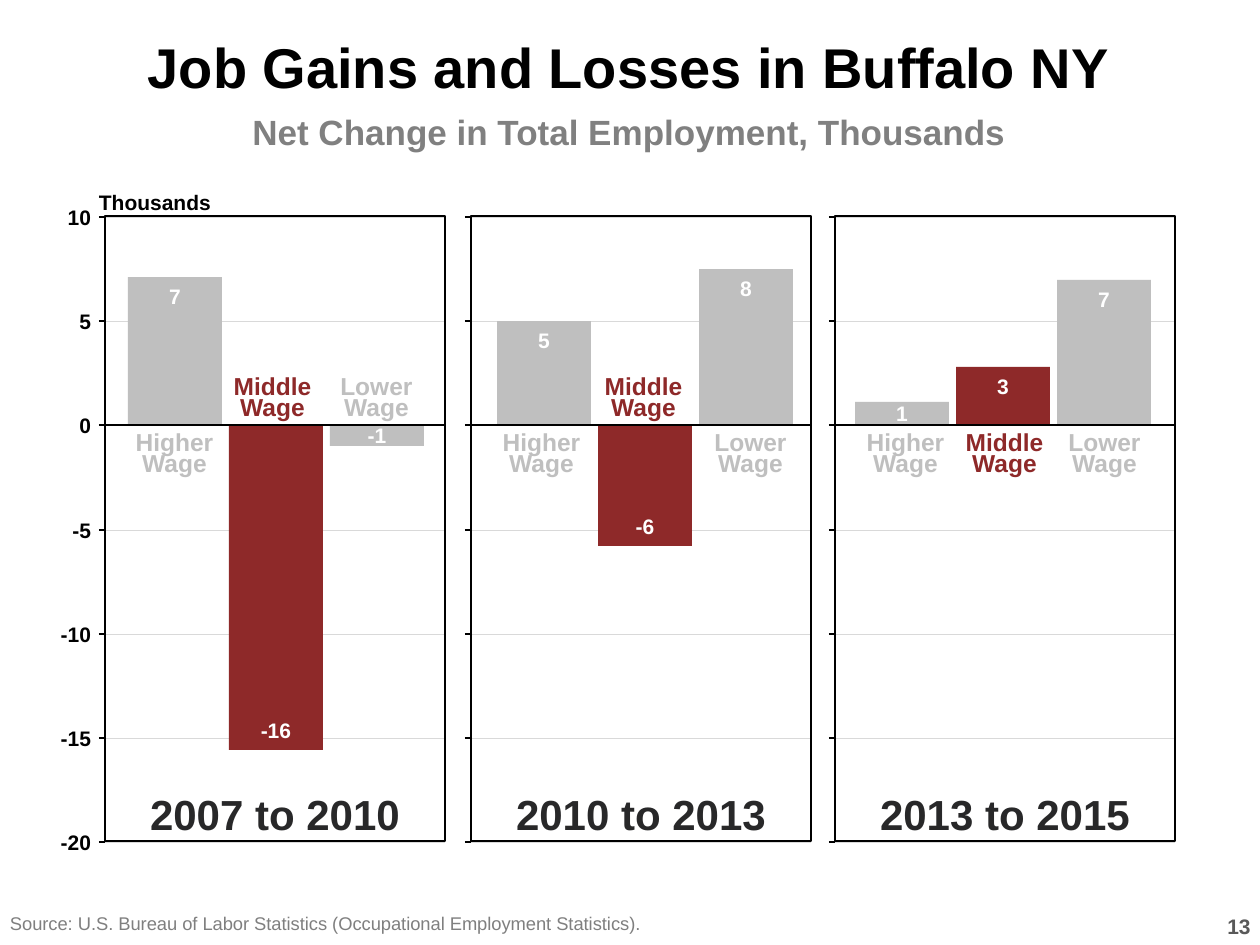
from lxml.etree import SubElement
from pptx import Presentation
from pptx.dml.color import RGBColor
from pptx.enum.shapes import MSO_CONNECTOR, MSO_SHAPE
from pptx.enum.text import PP_ALIGN
from pptx.oxml.ns import qn
from pptx.util import Emu, Pt

COLORS = {
    "black": "000000", "white": "FFFFFF", "grid": "D9D9D9", "bar": "BFBFBF",
    "focus": "8E2929", "period": "282829", "sub": "808080",
    "source": "7F7F7F", "page": "595959",
}
TOP, HIGH, WIDE = 217, 625, 340
TICKS = range(10, -21, -5)
BAR, STEP, INSET, LINE = 94, 101, 7, 25
NAME = 107
NAMES = ["Higher\vWage", "Middle\vWage", "Lower\vWage"]
FILLS = ["bar", "focus", "bar"]

# period, panel left, first bar left, wage label lefts, (height, label) of bars
PANELS = [
    ("2007 to 2010", 105, 128, (121, 219, 323),
     ((7.1, "7"), (-15.6, "-16"), (-1, "-1"))),
    ("2010 to 2013", 471, 497, (488, 590, 697),
     ((5, "5"), (-5.8, "-6"), (7.5, "8"))),
    ("2013 to 2015", 835, 855, (852, 951, 1051),
     ((1.1, "1"), (2.8, "3"), (7, "7"))),
]


def px(n):
    return Emu(round(n * 914400 / 126))


def level(value):
    """Height on the slide of a value on the axis."""
    return round(TOP + (TICKS[0] - value) * HIGH / (TICKS[0] - TICKS[-1]))


class Pen:
    font = "Arial"

    def __init__(self, slide):
        self.shapes = slide.shapes

    def color(self, name):
        return RGBColor.from_string(COLORS[name])

    def text(self, box, *lines, bold=True, align=PP_ALIGN.CENTER,
             pitch=None, gap=0):
        """Each line is (words, size, color); gap parts the lines."""
        frame = self.shapes.add_textbox(*map(px, box)).text_frame
        frame.word_wrap = True
        frame.margin_left = frame.margin_right = 0
        frame.margin_top = frame.margin_bottom = 0
        for i, (words, size, color) in enumerate(lines):
            para = frame.add_paragraph() if i else frame.paragraphs[0]
            para.text = words
            para.alignment = align
            if i:
                para.space_before = Pt(gap)
            if pitch:
                para.line_spacing = Pt(pitch)
            for run in para.runs:
                run.font.name = self.font
                run.font.size = Pt(size)
                run.font.bold = bold
                run.font.color.rgb = self.color(color)

    def rect(self, box, fill=None, line=None):
        shape = self.shapes.add_shape(MSO_SHAPE.RECTANGLE, *map(px, box))
        shape.shadow.inherit = False
        if fill:
            shape.fill.solid()
            shape.fill.fore_color.rgb = self.color(fill)
        else:
            shape.fill.background()
        if line:
            shape.line.color.rgb = self.color(line)
            shape.line.width = Pt(0.75)
        else:
            shape.line.fill.background()

    def line(self, x1, y1, x2, y2, color="black", width=0.75):
        link = self.shapes.add_connector(
            MSO_CONNECTOR.STRAIGHT, px(x1), px(y1), px(x2), px(y2))
        link.line.color.rgb = self.color(color)
        link.line.width = Pt(width)
        SubElement(link._element.spPr, qn("a:effectLst"))

    def bar(self, left, value, label, fill):
        top, base = sorted((level(value), level(0)))
        self.rect((left, top, BAR, base - top), fill)
        inset = min(INSET, (base - top - LINE) // 2)
        y = top + inset if value > 0 else base - LINE - inset
        wide = 12 * len(label)
        x = left + (BAR - wide) // 2
        self.text((x, y, wide, LINE), (label, 12, "white"))

    def panel(self, period, left, start, spots, bars):
        right = left + WIDE
        for tick in TICKS:
            y = level(tick)
            if tick:
                self.line(left, y, right, y, "grid", 0.5)
            self.line(left - 6, y, left, y)
        self.rect((left, TOP - 1, WIDE, HIGH), line="black")
        for i, (value, label) in enumerate(bars):
            self.bar(start + i * STEP, value, label, FILLS[i])
            y = 435 if value > 0 else 379
            self.text((spots[i], y, NAME, 43),
                      (NAMES[i], 14, FILLS[i]), pitch=12)
        self.line(left, level(0), right, level(0), width=1.25)
        self.text((left, 789, WIDE, 48), (period, 24, "period"))


def main():
    deck = Presentation()
    deck.slide_width, deck.slide_height = px(1260), px(945)
    pen = Pen(deck.slides.add_slide(deck.slide_layouts[6]))

    pen.text((10, 33, 1238, 116),
             ("Job Gains and Losses in Buffalo NY", 32, "black"),
             ("Net Change in Total Employment, Thousands", 20, "sub"), gap=6)

    for panel in PANELS:
        pen.panel(*panel)

    axis = PANELS[0][1]
    pen.line(axis, TOP, axis, TOP + HIGH, width=1.25)
    pen.text((99, 190, 113, LINE), ("Thousands", 12, "black"),
             align=PP_ALIGN.LEFT)
    for tick in TICKS:
        pen.text((55, level(tick) - 12, 36, LINE),
                 (str(tick), 12, "black"), align=PP_ALIGN.RIGHT)

    pen.text((10, 912, 968, 22),
             ("Source: U.S. Bureau of Labor Statistics "
              "(Occupational Employment Statistics).", 10.5, "source"),
             bold=False, align=PP_ALIGN.LEFT)
    pen.text((1218, 914, 42, LINE), ("13", 12, "page"))
    deck.save("out.pptx")


if __name__ == "__main__":
    main()
